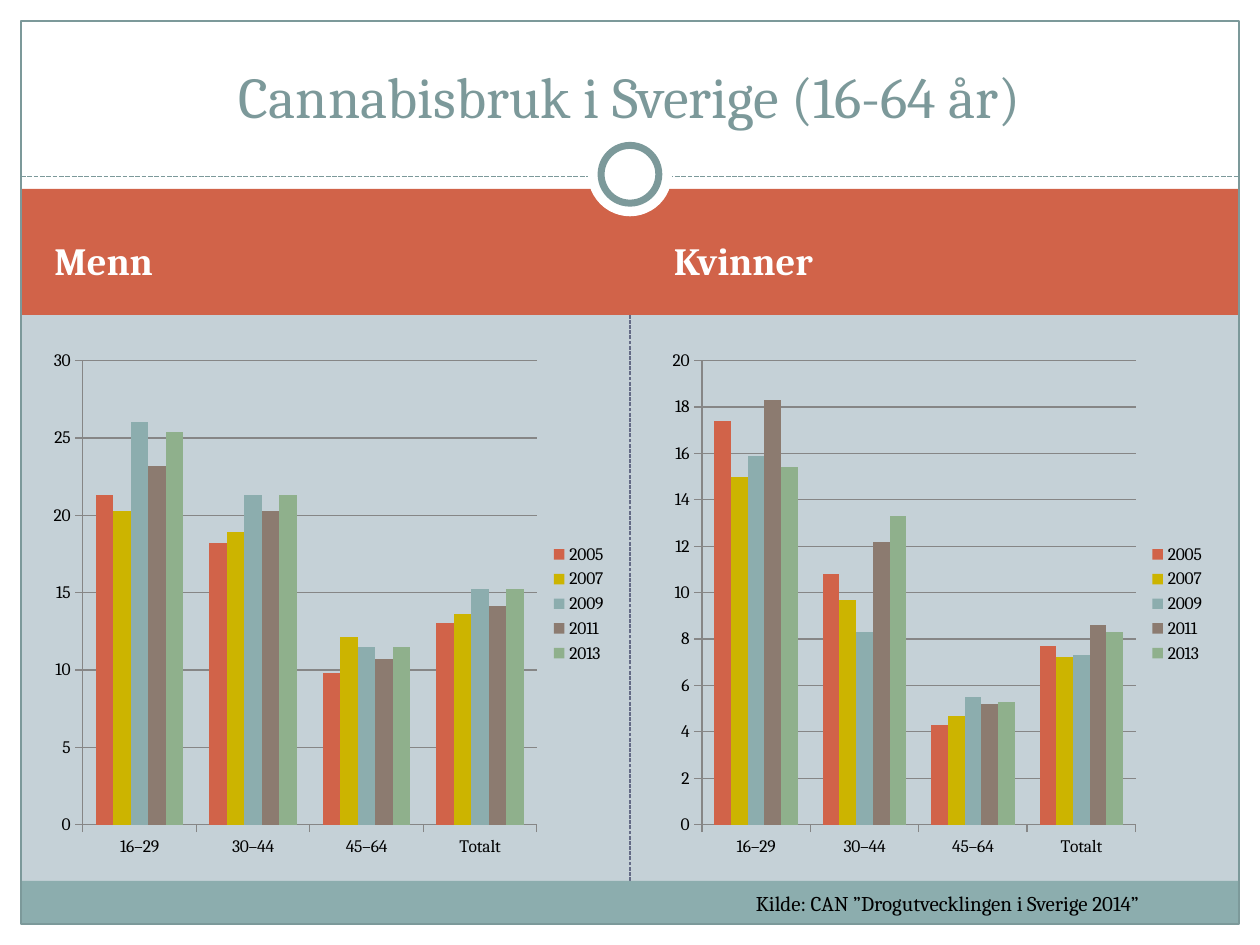
from typing import NamedTuple, Optional

from lxml.etree import SubElement
from pptx import Presentation
from pptx.chart.data import CategoryChartData
from pptx.dml.color import RGBColor
from pptx.enum.chart import XL_CHART_TYPE as Kind, XL_LEGEND_POSITION as Side, XL_TICK_MARK as Tick
from pptx.enum.dml import MSO_LINE as Dash
from pptx.enum.shapes import MSO_CONNECTOR as Link, MSO_SHAPE as Form
from pptx.enum.text import MSO_ANCHOR as Anchor, MSO_AUTO_SIZE as Fit, PP_ALIGN as Align
from pptx.oxml.ns import qn
from pptx.util import Inches, Pt

# The slide is a grid of 120 columns and 90 rows, each a twelfth of an inch.
COLS, ROWS = 120, 90
EDGE = 2
FONT = "Cambria"
HUES = {
    "back": "C5D1D7", "white": "FFFFFF", "black": "000000", "red": "D16349",
    "teal": "8CADAE", "slate": "7C999A", "navy": "646B86", "gold": "CCB400",
    "brown": "8C7B70", "green": "8FB08C", "grey": "868686",
}
AGES = ["16–29", "30–44", "45–64", "Totalt"]
YEARS = {"2005": "red", "2007": "gold", "2009": "teal", "2011": "brown", "2013": "green"}


class Box(NamedTuple):
    x: float
    y: float
    w: float
    h: float


class Part(NamedTuple):
    box: Box
    fill: Optional[str] = None
    line: Optional[str] = None
    width: float = 0.75
    form: Form = Form.RECTANGLE


class Rule(NamedTuple):
    start: tuple[float, float]
    end: tuple[float, float]
    hue: str
    width: float


class Panel(NamedTuple):
    name: str
    head: Box
    plot: Box
    top: int
    step: int
    rows: list[list[float]]


INNER = COLS - 2 * EDGE
PARTS = [
    Part(Box(0, 0, COLS, 19), "white"),
    Part(Box(0, ROWS - EDGE, COLS, EDGE), "white"),
    Part(Box(0, 0, EDGE, ROWS), "white"),
    Part(Box(COLS - EDGE, 0, EDGE, ROWS), "white"),
    Part(Box(EDGE, 18, INNER, 12), "red"),
    Part(Box(EDGE, 83.9, INNER, 4.1), "teal"),
]
TRIM = [
    Part(Box(EDGE, EDGE, INNER, ROWS - 2 * EDGE), None, "slate"),
    Part(Box(56, 12.6, 8, 8), "white", form=Form.OVAL),
    Part(Box(57.25, 13.85, 5.5, 5.5), "white", "slate", 4, Form.OVAL),
]
SPLIT = Rule((60, 83.9), (60, 29), "navy", 0.75)
CROSS = Rule((EDGE, 16.8), (COLS - EDGE, 16.8), "slate", 0.9)
PANELS = [
    Panel("Menn", Box(4, 20, 53, 9.6), Box(4, 32.4, 55, 50.2), 30, 5, [
        [21.3, 18.2, 9.8, 13], [20.3, 18.9, 12.1, 13.6], [26, 21.3, 11.5, 15.2],
        [23.2, 20.3, 10.7, 14.1], [25.4, 21.3, 11.5, 15.2]]),
    Panel("Kvinner", Box(63, 20, 53, 9.6), Box(63, 32.4, 53, 50.2), 20, 2, [
        [17.4, 10.8, 4.3, 7.7], [15, 9.7, 4.7, 7.2], [15.9, 8.3, 5.5, 7.3],
        [18.3, 12.2, 5.2, 8.6], [15.4, 13.3, 5.3, 8.3]]),
]


def unit(n: float) -> int:
    return Inches(n / 12)


def place(box: Box) -> list[int]:
    return [unit(n) for n in box]


def paint(hue: str) -> RGBColor:
    return RGBColor.from_string(HUES[hue])


def style(font, size: float, hue: str, bold: bool = False) -> None:
    font.name, font.size, font.bold = FONT, Pt(size), bold
    font.color.rgb = paint(hue)


def stroke(line, hue: str, width: float) -> None:
    line.color.rgb = paint(hue)
    line.width = Pt(width)


def draw(slide, part: Part) -> None:
    shape = slide.shapes.add_shape(part.form, *place(part.box))
    shape.shadow.inherit = False
    if part.fill:
        shape.fill.solid()
        shape.fill.fore_color.rgb = paint(part.fill)
    else:
        shape.fill.background()
    if part.line:
        stroke(shape.line, part.line, part.width)
    else:
        shape.line.fill.background()


def dash(slide, rule: Rule) -> None:
    ends = [unit(n) for n in rule.start + rule.end]
    line = slide.shapes.add_connector(Link.STRAIGHT, *ends)
    stroke(line.line, rule.hue, rule.width)
    line.line.dash_style = Dash.SQUARE_DOT
    SubElement(line._element.spPr, qn("a:effectLst"))


def write(shape, text: str, size: float, hue: str, anchor: Anchor,
          align: Align = Align.LEFT, bold: bool = False) -> None:
    frame = shape.text_frame
    frame.word_wrap, frame.auto_size = True, Fit.NONE
    frame.vertical_anchor = anchor
    para = frame.paragraphs[0]
    para.alignment = align
    run = para.add_run()
    run.text = text
    style(run.font, size, hue, bold)


def plot(slide, panel: Panel) -> None:
    data = CategoryChartData(number_format="0.0")
    data.categories = AGES
    for year, row in zip(YEARS, panel.rows):
        data.add_series(year, row)
    chart = slide.shapes.add_chart(Kind.COLUMN_CLUSTERED, *place(panel.plot), data).chart
    style(chart.font, 10, "black")
    chart.has_title = False
    chart.has_legend = True
    chart.legend.position = Side.RIGHT
    chart.legend.include_in_layout = False

    bars = chart.plots[0]
    bars.gap_width, bars.overlap, bars.vary_by_categories = 150, 0, False
    for series, hue in zip(bars.series, YEARS.values()):
        series.format.fill.solid()
        series.format.fill.fore_color.rgb = paint(hue)

    for axis in (chart.category_axis, chart.value_axis):
        axis.major_tick_mark, axis.minor_tick_mark = Tick.OUTSIDE, Tick.NONE
        stroke(axis.format.line, "grey", 0.75)
    axis = chart.value_axis
    axis.minimum_scale, axis.maximum_scale, axis.major_unit = 0, panel.top, panel.step
    axis.tick_labels.number_format = "0"
    axis.tick_labels.number_format_is_linked = False
    axis.has_major_gridlines = True
    stroke(axis.major_gridlines.format.line, "grey", 0.75)


def main() -> None:
    deck = Presentation()
    deck.slide_width, deck.slide_height = unit(COLS), unit(ROWS)
    slide = deck.slides.add_slide(deck.slide_layouts[5])
    slide.background.fill.solid()
    slide.background.fill.fore_color.rgb = paint("back")

    dash(slide, SPLIT)
    for part in PARTS:
        draw(slide, part)
    dash(slide, CROSS)
    for part in TRIM:
        draw(slide, part)

    title = slide.shapes.title
    title.left, title.top, title.width, title.height = place(Box(4, 3, 112, 10))
    write(title, "Cannabisbruk i Sverige (16-64 år)", 33, "slate", Anchor.BOTTOM, Align.CENTER)
    slide.shapes._spTree.append(title._element)  # bring in front of the white band

    for panel in PANELS:
        head = slide.shapes.add_textbox(*place(panel.head))
        write(head, panel.name, 22, "white", Anchor.MIDDLE, bold=True)
        plot(slide, panel)

    note = slide.shapes.add_textbox(*place(Box(70.8, 84.2, 45.2, 3.6)))
    write(note, "Kilde: CAN ”Drogutvecklingen i Sverige 2014”", 12, "black", Anchor.TOP)
    deck.save("out.pptx")


if __name__ == "__main__":
    main()
